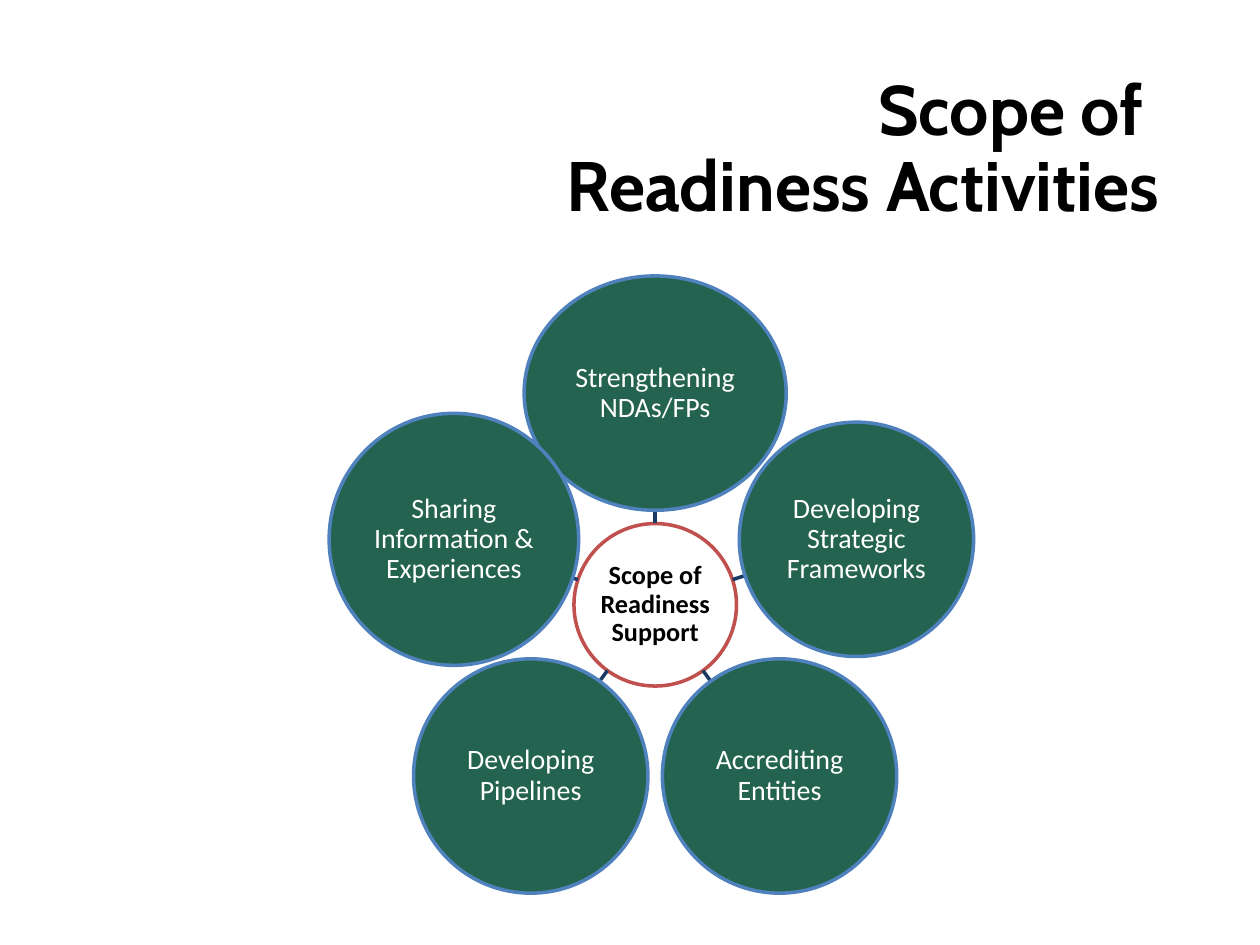
import math

from lxml import etree
from pptx import Presentation
from pptx.dml.color import RGBColor
from pptx.enum import shapes, text
from pptx.oxml import ns
from pptx.util import Inches, Pt

BLACK = RGBColor(0x00, 0x00, 0x00)
WHITE = RGBColor(0xFF, 0xFF, 0xFF)
GREEN = RGBColor(0x24, 0x63, 0x4F)
BLUE = RGBColor(0x4F, 0x81, 0xBD)
RED = RGBColor(0xC0, 0x50, 0x4D)
NAVY = RGBColor(0x19, 0x3A, 0x64)

# Activities clockwise from the top: label, circle width, circle height
ACTIVITIES = [
    ("Strengthening NDAs/FPs", 2.08, 1.86),
    ("Developing Strategic Frameworks", 1.86, 1.86),
    ("Accrediting Entities", 1.86, 1.86),
    ("Developing Pipelines", 1.86, 1.86),
    ("Sharing Information & Experiences", 1.98, 2.0),
]
HUB_SIZE = 1.29
ORBIT = 1.68
SPOKE = 0.1


def format_text(tf, font, size, color, bold, align):
    tf.word_wrap = True
    tf.vertical_anchor = text.MSO_ANCHOR.MIDDLE
    for p in tf.paragraphs:
        p.alignment = align
        p.line_spacing = 0.9
        for r in p.runs:
            r.font.name = font
            r.font.size = Pt(size)
            r.font.bold = bold
            r.font.color.rgb = color


def add_title(slide, left, top, width, height):
    title = slide.shapes.title
    title.left, title.top = Inches(left), Inches(top)
    title.width, title.height = Inches(width), Inches(height)
    tf = title.text_frame
    tf.text = "Scope of \vReadiness Activities"
    tf.auto_size = text.MSO_AUTO_SIZE.NONE
    format_text(tf, "Cabin", 40, BLACK, True, text.PP_ALIGN.RIGHT)


def add_circle(slide, cx, cy, width, height, label, fill, line, size, color, bold):
    sp = slide.shapes.add_shape(
        shapes.MSO_SHAPE.OVAL, Inches(cx - width / 2), Inches(cy - height / 2),
        Inches(width), Inches(height))
    sp.shadow.inherit = False
    sp.fill.solid()
    sp.fill.fore_color.rgb = fill
    sp.line.color.rgb = line
    sp.line.width = Pt(2)
    tf = sp.text_frame
    tf.text = label
    tf.margin_left = tf.margin_right = tf.margin_top = tf.margin_bottom = Inches(0.01)
    format_text(tf, "Calibri", size, color, bold, text.PP_ALIGN.CENTER)


def add_spoke(slide, start, end):
    line = slide.shapes.add_connector(
        shapes.MSO_CONNECTOR.STRAIGHT, *(Inches(v) for v in (*start, *end)))
    line.line.color.rgb = NAVY
    line.line.width = Pt(2)
    etree.SubElement(line._element.spPr, ns.qn("a:effectLst"))


def add_radial_diagram(slide, left, top, width, height):
    cx, cy = left + width / 2, top + height / 2

    def polar(radius, angle):
        return cx + radius * math.cos(angle), cy + radius * math.sin(angle)

    # Hub
    add_circle(slide, cx, cy, HUB_SIZE, HUB_SIZE, "Scope of Readiness Support",
               WHITE, RED, 15, BLACK, True)

    # Spokes and activity circles at equal angles
    for i, (label, w, h) in enumerate(ACTIVITIES):
        angle = math.radians(360 * i / len(ACTIVITIES) - 90)
        add_spoke(slide, polar(HUB_SIZE / 2, angle), polar(HUB_SIZE / 2 + SPOKE, angle))
        add_circle(slide, *polar(ORBIT, angle), w, h, label,
                   GREEN, BLUE, 16, WHITE, False)


def main():
    prs = Presentation()
    prs.slide_width, prs.slide_height = Inches(10), Inches(7.5)
    slide = prs.slides.add_slide(prs.slide_layouts.get_by_name("Title Only"))
    add_title(slide, 1.89, 0.57, 7.41, 1.25)
    add_radial_diagram(slide, 2.6, 2.2, 5.2, 5.2)
    prs.save("out.pptx")


if __name__ == "__main__":
    main()
